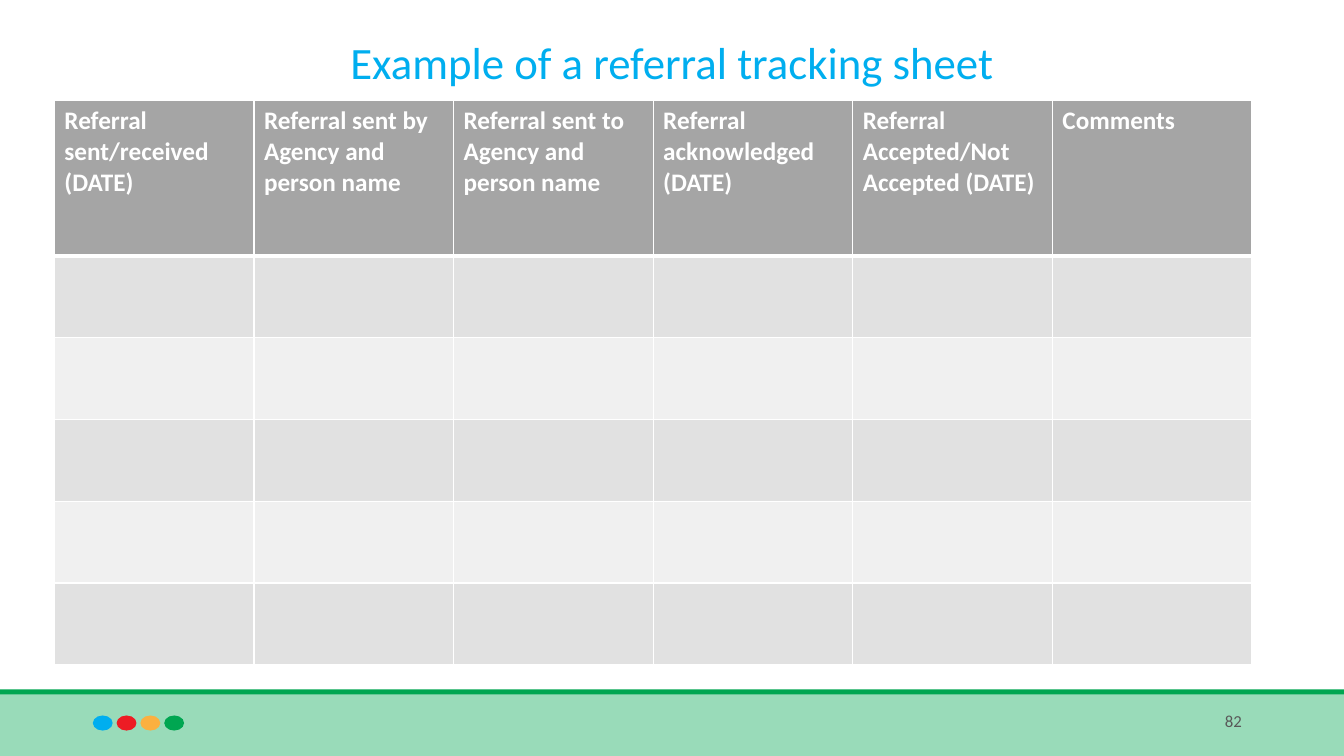
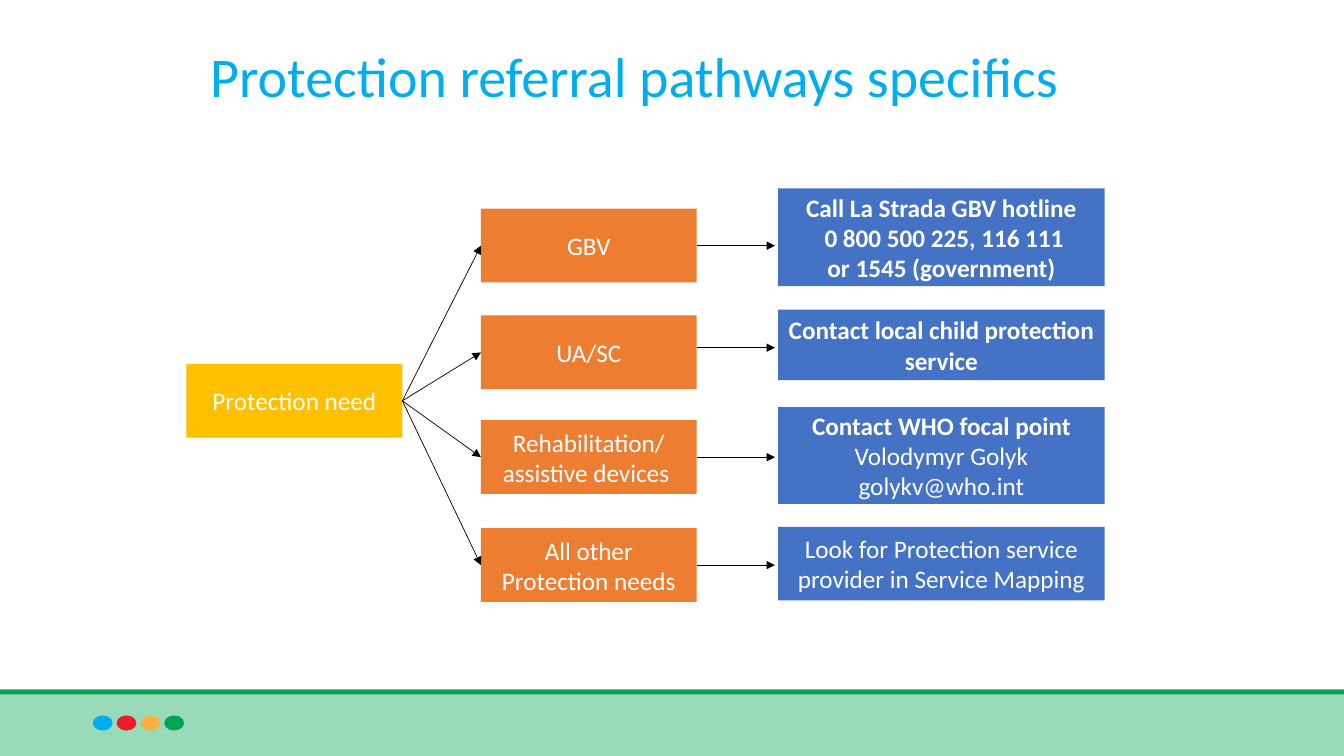
"""Build two slides on referral tracking and protection pathways."""
from dataclasses import dataclass

from lxml.etree import SubElement
from pptx import Presentation
from pptx.dml.color import RGBColor
from pptx.enum.shapes import MSO_CONNECTOR, MSO_SHAPE
from pptx.enum.text import MSO_ANCHOR, PP_ALIGN
from pptx.oxml.ns import qn
from pptx.util import Cm, Pt


@dataclass(frozen=True)
class Theme:
    """Hold the colours and type sizes of the deck."""
    face: str = "Calibri"
    blue: str = "00AEEF"
    green: str = "00A651"
    band: str = "99DBB9"
    dots: tuple = ("00AEEF", "ED1C24", "FBB040", "00A651")
    root: str = "FFC000"
    need: str = "ED7D31"
    reply: str = "4472C4"
    head: str = "A5A5A5"
    rows: tuple = ("E1E1E1", "F0F0F0")
    white: str = "FFFFFF"
    black: str = "000000"
    grey: str = "595959"
    body: int = 18
    small: int = 12


THEME = Theme()
HEADS = (
    "Referral sent/received (DATE)",
    "Referral sent by\nAgency and person name",
    "Referral sent to Agency and person name",
    "Referral acknowledged (DATE)",
    "Referral Accepted/Not Accepted (DATE)",
    "Comments",
)
PATHS = (
    (5.26, "GBV", 4.75, 2.46, 3,
     "Call La Strada GBV hotline\n 0 800 500 225, 116 111\nor 1545 (government)", None),
    (7.95, "UA/SC", 7.8, 1.78, 1, "Contact local child protection service", 8.76),
    (10.59, "Rehabilitation/\vassistive devices ", 10.26, 2.44, 1,
     "Contact WHO focal point\nVolodymyr Golyk\ngolykv@who.int", None),
    (13.31, "All other Protection needs", 13.28, 1.85, 0,
     "Look for Protection service provider in Service Mapping", None),
)


def apply(item, form):
    """Set each format value on an object."""
    for key, value in form.items():
        setattr(item, key, value)


def paint(item, tint):
    """Give a shape or cell a plain fill."""
    item.fill.solid()
    item.fill.fore_color.rgb = RGBColor.from_string(tint)


def write(frame, text, size, tint, align, heavy=0, space=None):
    """Fill a text frame, with its first heavy lines in bold."""
    frame.text = text
    for pos, para in enumerate(frame.paragraphs):
        apply(para, {"alignment": align, "line_spacing": space})
        for run in para.runs:
            apply(run.font, {"name": THEME.face, "size": Pt(size), "bold": pos < heavy})
            run.font.color.rgb = RGBColor.from_string(tint)


def label(slide, area, text, size, tint, align, space=None):
    """Add a text box centred on its height."""
    frame = slide.shapes.add_textbox(*map(Cm, area)).text_frame
    apply(frame, {"word_wrap": True, "vertical_anchor": MSO_ANCHOR.MIDDLE})
    write(frame, text, size, tint, align, space=space)


def block(slide, area, tint, text="", heavy=0, kind=MSO_SHAPE.RECTANGLE):
    """Add a filled shape with centred white text."""
    shape = slide.shapes.add_shape(kind, *map(Cm, area))
    shape.shadow.inherit = False
    shape.line.fill.background()
    paint(shape, tint)
    if text:
        apply(shape.text_frame, {"word_wrap": True, "vertical_anchor": MSO_ANCHOR.MIDDLE})
        write(shape.text_frame, text, THEME.body, THEME.white, PP_ALIGN.CENTER, heavy)
    return shape


def arrow(slide, start, end, source=None, target=None):
    """Draw an arrow from a right side to a left side or a point."""
    line = slide.shapes.add_connector(MSO_CONNECTOR.STRAIGHT, *map(Cm, start + end))
    if source is not None:
        line.begin_connect(source, 3)
    if target is not None:
        line.end_connect(target, 1)
    line.line.width = Pt(0.5)
    line.line.color.rgb = RGBColor.from_string(THEME.black)
    SubElement(line.line._get_or_add_ln(), qn("a:tailEnd"), type="triangle")
    SubElement(line._element.spPr, qn("a:effectLst"))


def frame_cell(cell, top, base):
    """Draw white borders on a cell."""
    props = cell._tc.get_or_add_tcPr()
    for side, width in (("L", 1), ("R", 1), ("T", top), ("B", base)):
        line = SubElement(props, qn("a:ln" + side), w=str(Pt(width)))
        fill = SubElement(line, qn("a:solidFill"))
        SubElement(fill, qn("a:srgbClr"), val=THEME.white)


def start(deck, title, area, size):
    """Add a slide with the shared footer and title."""
    slide = deck.slides.add_slide(deck.slide_layouts[6])
    block(slide, (0, 17.45, 33.87, 1.6), THEME.band)
    block(slide, (0, 17.37, 33.87, 0.13), THEME.green)
    for pos, tint in enumerate(THEME.dots):
        block(slide, (2.34 + pos * 0.6, 18.03, 0.5, 0.38), tint, kind=MSO_SHAPE.OVAL)
    label(slide, area, title, size, THEME.blue, PP_ALIGN.CENTER, 0.9)
    return slide


def sheet(slide):
    """Add the blank tracking table."""
    count, wide, tall = 6, 5.03, (3.91,) + (2.06,) * 5
    area = (1.37, 2.54, wide * count, sum(tall))
    table = slide.shapes.add_table(len(tall), count, *map(Cm, area)).table
    table.horz_banding = False
    for col in table.columns:
        col.width = Cm(wide)
    for pos, row in enumerate(table.rows):
        row.height = Cm(tall[pos])
        for cell in row.cells:
            frame_cell(cell, 3 if pos == 1 else 1, 3 if pos == 0 else 1)
            paint(cell, THEME.rows[(pos - 1) % 2] if pos else THEME.head)
    for cell, text in zip(table.rows[0].cells, HEADS):
        write(cell.text_frame, text, THEME.body, THEME.white, PP_ALIGN.LEFT, 2)


def routes(slide):
    """Add the chart from a need to each service."""
    wide, tall = 5.44, 1.86
    left, top, near, far = 4.7, 9.17, 12.12, 19.61
    root = block(slide, (left, top, wide, tall), THEME.root, "Protection need")
    for high, name, rise, deep, heavy, text, level in PATHS:
        need = block(slide, (near, high, wide, tall), THEME.need, name)
        block(slide, (far, rise, 8.23, deep), THEME.reply, text, heavy)
        mid = high + tall / 2
        arrow(slide, (left + wide, top + tall / 2), (near, mid), root, need)
        flat = level or mid
        arrow(slide, (near + wide, flat), (far - 0.08, flat), None if level else need)


def main():
    """Build and save the deck."""
    deck = Presentation()
    apply(deck, {"slide_width": Cm(33.87), "slide_height": Cm(19.05)})
    slide = start(deck, "Example of a referral tracking sheet", (2.34, 0.3, 29.2, 2.67), 32)
    label(slide, (27.74, 17.65, 3.81, 1.02), "82", THEME.small, THEME.grey, PP_ALIGN.RIGHT)
    sheet(slide)
    routes(start(deck, "Protection referral pathways specifics", (5.03, 0.15, 21.9, 3.68), 40))
    deck.save("out.pptx")


if __name__ == "__main__":
    main()
